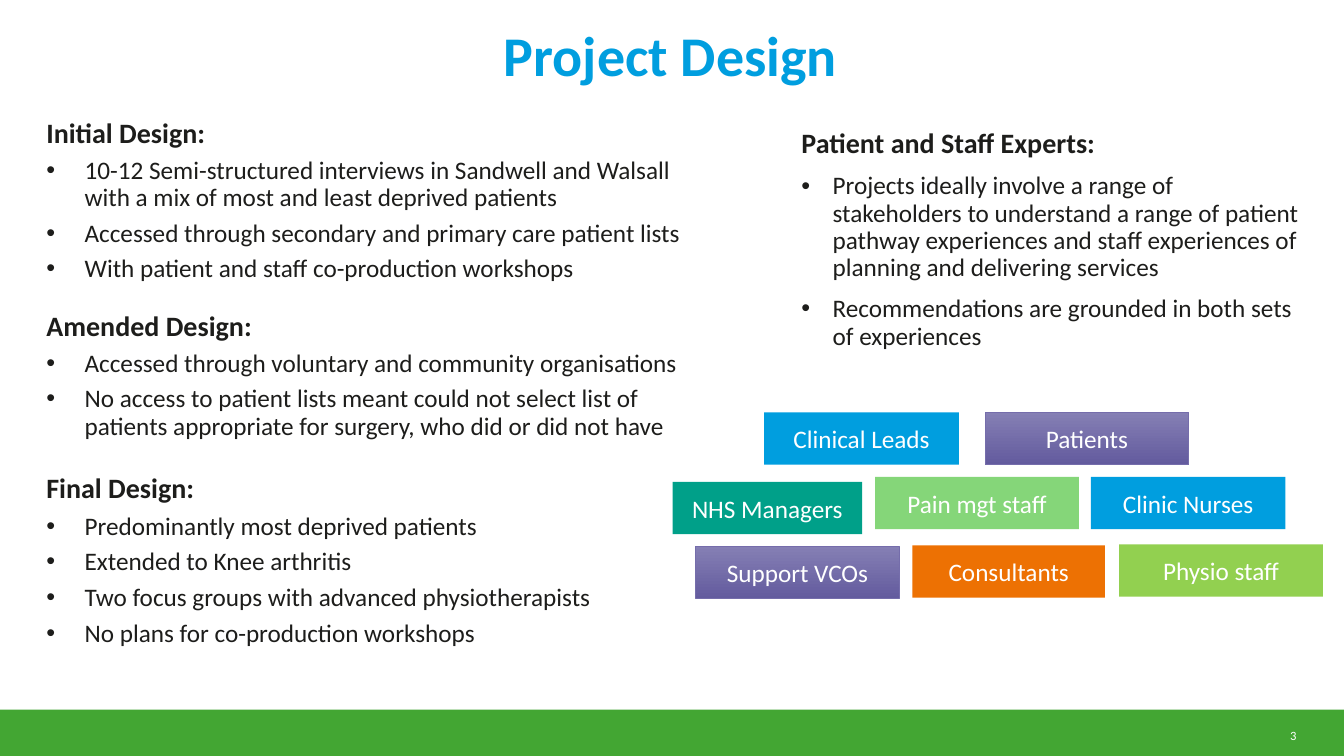
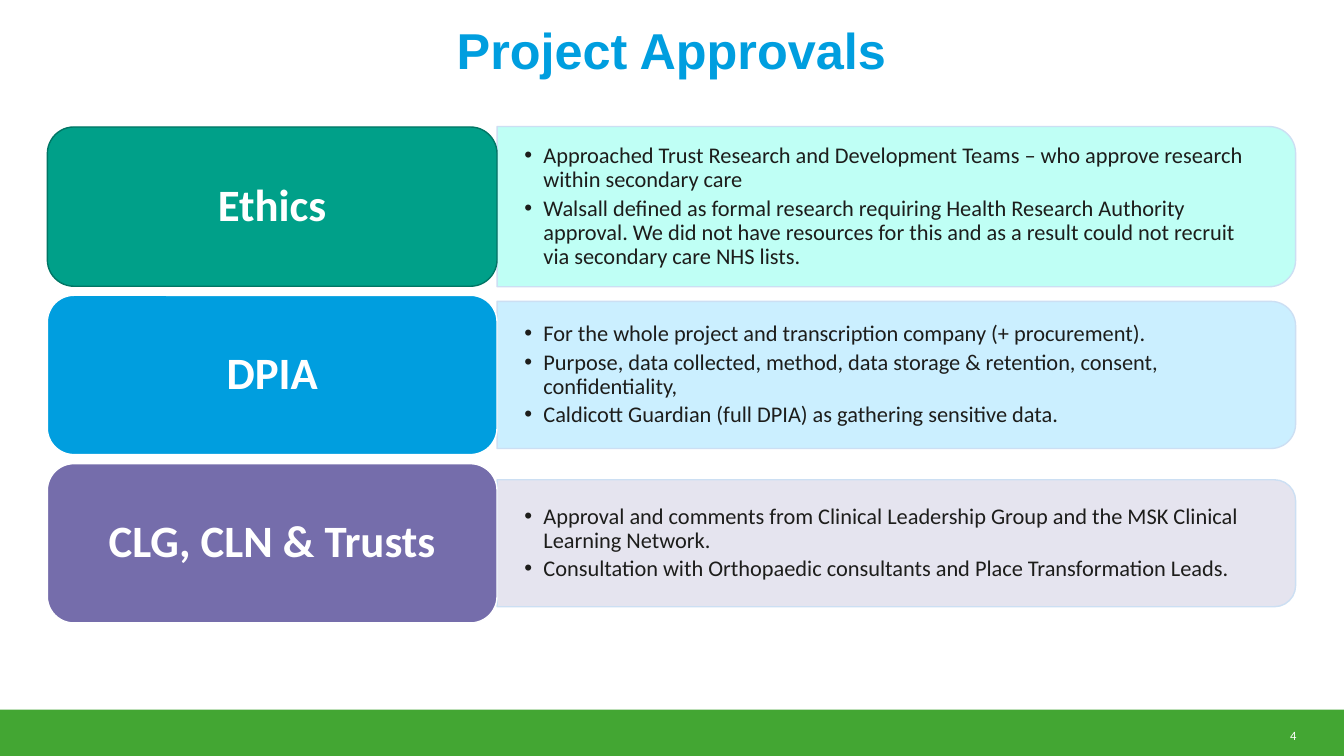
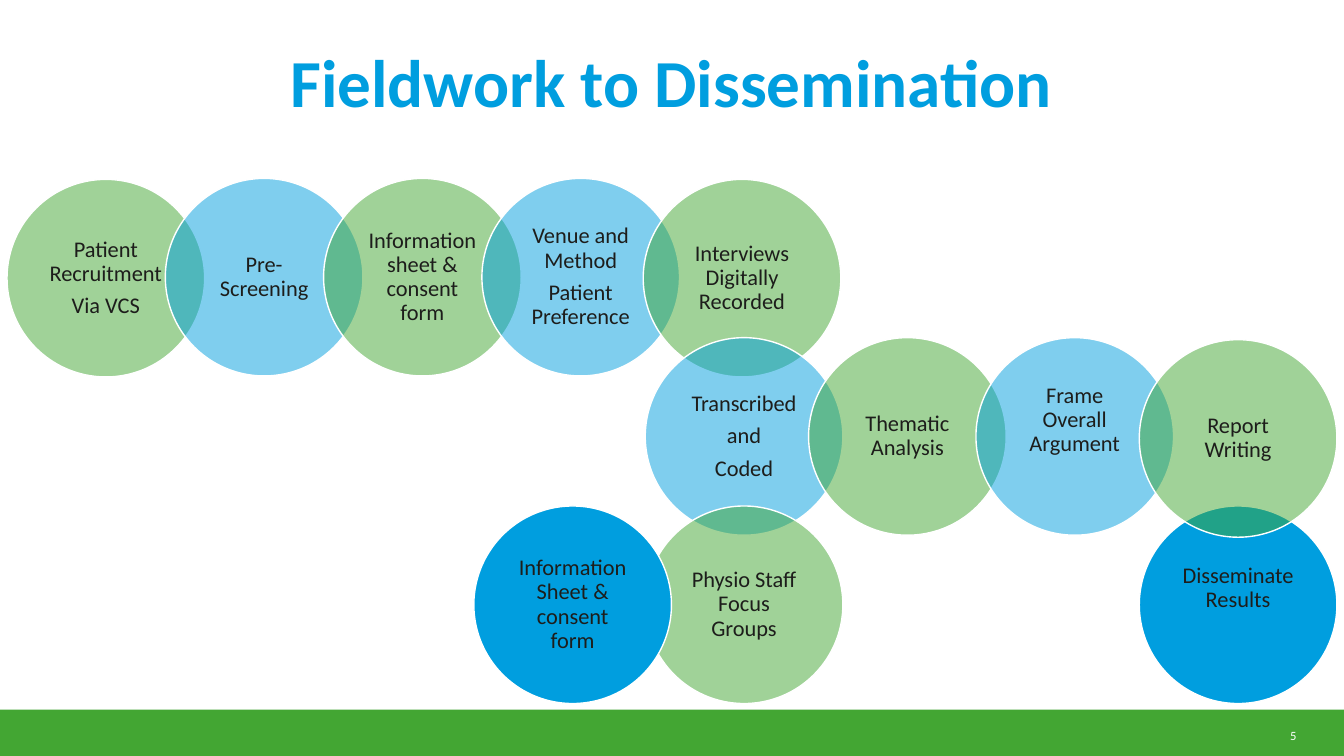
from lxml import etree
from pptx import Presentation
from pptx.dml.color import RGBColor
from pptx.enum.shapes import MSO_SHAPE
from pptx.enum.text import MSO_ANCHOR, MSO_AUTO_SIZE, PP_ALIGN
from pptx.oxml.ns import qn
from pptx.util import Inches, Pt

RECT, OVAL = MSO_SHAPE.RECTANGLE, MSO_SHAPE.OVAL
ROUND, TAB = MSO_SHAPE.ROUNDED_RECTANGLE, MSO_SHAPE.ROUND_2_SAME_RECTANGLE
TOP, MID = MSO_ANCHOR.TOP, MSO_ANCHOR.MIDDLE
LEFT, CENTER, RIGHT = PP_ALIGN.LEFT, PP_ALIGN.CENTER, PP_ALIGN.RIGHT
FIXED = MSO_AUTO_SIZE.NONE

HUES = {
    "ink": "1D1D1B", "white": "FFFFFF", "green": "43A633", "blue": "009EDF",
    "teal": "00A089", "pine": "007665", "purple": "756DAB", "orange": "ED7103",
    "lime": "92D050", "mint": "85D679", "light": "857FB4", "dark": "635B9E",
    "aqua": "B9FFF5", "sky": "C6EEFF", "lilac": "E3E2EE", "edge": "CCDFF3",
}

TITLES = [
    ("Project Design", (0.46, 0.28, 12.38, 0.74), 40, "Calibri"),
    ("Project Approvals", (0.47, 0.26, 12.38, 0.62), 36, "Arial"),
    ("Fieldwork to Dissemination", (0.47, 0.49, 12.38, 1.06), 48, "Calibri"),
]
FIRST = 3

DESIGNS = [
    ("Initial Design:", 0, [
        "10-12 Semi-structured interviews in Sandwell and Walsall with a mix of most and least deprived patients",
        "Accessed through secondary and primary care patient lists",
        "With patient and staff co-production workshops"]),
    ("Amended Design:", 20.4, [
        "Accessed through voluntary and community organisations",
        "No access to patient lists meant could not select list of patients appropriate for surgery, who did or did not have"]),
    ("Final Design:", 24.4, [
        "Predominantly most deprived patients",
        "Extended to Knee arthritis",
        "Two focus groups with advanced physiotherapists",
        "No plans for co-production workshops"]),
]
EXPERTS = [
    ("Patient and Staff Experts:", 0, [
        "Projects ideally involve a range of stakeholders to understand a range of patient pathway experiences and staff experiences of planning and delivering services",
        "Recommendations are grounded in both sets of experiences"]),
]
ROLES = [
    ("Patients", 9.77, 4.09, 2.02, "purple"),
    ("Physio staff", 11.1, 5.4, 2.02, "lime"),
    ("Consultants", 9.05, 5.41, 1.91, "orange"),
    ("NHS Managers", 6.67, 4.78, 1.88, "teal"),
    ("Clinic Nurses", 10.82, 4.73, 1.93, "blue"),
    ("Support VCOs", 6.9, 5.42, 2.02, "purple"),
    ("Pain mgt staff", 8.68, 4.73, 2.02, "mint"),
    ("Clinical Leads", 7.58, 4.09, 1.93, "blue"),
]
CHECKS = [
    ("Ethics", "teal", "pine", "aqua", 1.59, [
        "Approached Trust Research and Development Teams – who approve research within secondary care",
        "Walsall defined as formal research requiring Health Research Authority approval. We did not have resources for this and as a result could not recruit via secondary care NHS lists."]),
    ("DPIA", "blue", "white", "sky", 1.46, [
        "For the whole project and transcription company (+ procurement).",
        "Purpose, data collected, method, data storage & retention, consent, confidentiality,",
        "Caldicott Guardian (full DPIA) as gathering sensitive data."]),
    ("CLG, CLN & Trusts", "purple", "white", "lilac", 1.26, [
        "Approval and comments from Clinical Leadership Group and the MSK Clinical Learning Network.",
        "Consultation with Orthopaedic consultants and Place Transformation Leads."]),
]
STAGES = [
    (["Patient Recruitment", "Via VCS"], 0.07, 1.78, "green", 50, 0),
    (["Pre-Screening"], 1.64, 1.77, "blue", 50, 0),
    (["Information sheet & consent form"], 3.21, 1.77, "green", 50, 0),
    (["Venue and Method", "Patient Preference"], 4.78, 1.77, "blue", 50, 0),
    (["Interviews Digitally Recorded"], 6.38, 1.78, "green", 50, 0),
    (["Transcribed", "and", "Coded"], 6.4, 3.35, "blue", 50, 0),
    (["Thematic Analysis"], 8.02, 3.35, "green", 50, 0),
    (["Frame Overall Argument"], 9.68, 3.35, "blue", 50, 0.32),
    (["Physio Staff Focus Groups"], 6.4, 5.02, "green", 50, 0),
    (["Disseminate Results"], 11.3, 5.02, "blue", 100, 0.32),
    (["Report Writing"], 11.3, 3.37, "green", 50, 0),
    (["Information Sheet & consent form"], 4.7, 5.02, "blue", 100, 0),
]


def tint(name):
    return RGBColor.from_string(HUES[name])


def place(shape, box):
    shape.left, shape.top, shape.width, shape.height = map(Inches, box)


def write(shape, lines, size=18, hue="ink", font="Calibri", bold=False, align=LEFT,
          anchor=TOP, pad=(0, 0, 0, 0), lead=0.9, before=0, after=0, hang=0, more=False):
    frame = shape.text_frame
    frame.word_wrap, frame.auto_size, frame.vertical_anchor = True, FIXED, anchor
    (frame.margin_left, frame.margin_top,
     frame.margin_right, frame.margin_bottom) = map(Inches, pad)
    for rank, line in enumerate(lines):
        fresh = rank == 0 and not more
        para = frame.paragraphs[0] if fresh else frame.add_paragraph()
        if hang:
            props = para._p.get_or_add_pPr()
            props.set("marL", str(Inches(hang)))
            props.set("indent", str(-Inches(hang)))
            etree.SubElement(props, qn("a:buFont")).set("typeface", "Arial")
            etree.SubElement(props, qn("a:buChar")).set("char", "•")
        para.alignment, para.line_spacing = align, lead
        para.space_before = Pt(0 if fresh else before)
        para.space_after = Pt(after)
        run = para.add_run()
        run.text = line
        run.font.size, run.font.name, run.font.bold = Pt(size), font, bold
        run.font.color.rgb = tint(hue)


def draw(slide, kind, box, fill, line=None, width=1, alpha=100):
    shape = slide.shapes.add_shape(kind, *map(Inches, box))
    shape.shadow.inherit = False
    shape.fill.solid()
    shape.fill.fore_color.rgb = tint(fill)
    if alpha < 100:
        color = shape.element.spPr.find(qn("a:solidFill"))[0]
        etree.SubElement(color, qn("a:alpha")).set("val", str(alpha * 1000))
    if line:
        shape.line.color.rgb = tint(line)
        shape.line.width = Pt(width)
    else:
        shape.line.fill.background()
    return shape


def label(slide, box, lines, **fmt):
    write(slide.shapes.add_textbox(*map(Inches, box)), lines, **fmt)


def outline(slide, box, parts, hang, gap, pad):
    shape = slide.shapes.add_textbox(*map(Inches, box))
    for rank, (head, space, points) in enumerate(parts):
        write(shape, [head], size=20, bold=True, before=space, pad=pad, more=rank > 0)
        write(shape, points, before=gap, hang=hang, pad=pad, more=True)


def design(slide):
    outline(slide, (0.46, 1.18, 6.6, 5.13), DESIGNS, 0.38, 6, (0, 0, 0, 0))
    for name, left, top, width, hue in ROLES:
        shape = draw(slide, RECT, (left, top, width, 0.52), hue)
        if hue == "purple":
            shape.fill.gradient()
            shape.fill.gradient_angle = 270
            for stop, shade in zip(shape.fill.gradient_stops, ("light", "dark")):
                stop.color.rgb = tint(shade)
            shape.line.color.rgb = tint(hue)
            shape.line.width = Pt(0.5)
        write(shape, [name], hue="white", align=CENTER, anchor=MID, lead=1,
              pad=(0.1, 0.05, 0.1, 0.05))
    outline(slide, (7.85, 1.23, 5.21, 2.32), EXPERTS, 0.31, 10, (0.1, 0.05, 0.1, 0.05))


def approve(slide):
    left, split, wide, tall = 0.47, 4.93, 7.92, 1.58
    for row, (name, hue, line, pale, high, points) in enumerate(CHECKS):
        mid = 2.05 + 1.67 * row
        box = (split + (wide - high) / 2, mid - wide / 2, high, wide)
        draw(slide, TAB, box, pale, "edge", alpha=90).rotation = 90
        label(slide, (split, mid - high / 2, 7.8, high), points, size=16, anchor=MID,
              after=3, hang=0.19, pad=(0.27, 0.14, 0.27, 0.14))
        shape = draw(slide, ROUND, (left, mid - tall / 2, split - left, tall), hue, line)
        write(shape, [name], size=32, hue="white", bold=True, align=CENTER, anchor=MID,
              pad=(0.13, 0.07, 0.13, 0.07))


def chain(slide):
    for lines, left, top, hue, alpha, lift in STAGES:
        shape = draw(slide, OVAL, (left, top, 1.96, 1.96), hue, "white", alpha=alpha)
        write(shape, lines, size=16, align=CENTER, anchor=MID, after=6,
              pad=(0.11, 0.02, 0.11, 0.02 + lift))


def main():
    deck = Presentation()
    deck.slide_width, deck.slide_height = Inches(13.33), Inches(7.5)
    layout = deck.slide_layouts[5]
    for rank, (build, title) in enumerate(zip((design, approve, chain), TITLES)):
        slide = deck.slides.add_slide(layout)
        if rank == 0:
            band = draw(slide, RECT, (0, 7.04, 13.33, 0.46), "green")
            layout.shapes.element.append(band.element)
        text, box, size, font = title
        place(slide.shapes.title, box)
        write(slide.shapes.title, [text], size=size, hue="blue", font=font, bold=True,
              align=CENTER)
        label(slide, (12.58, 7.22, 0.28, 0.13), [str(FIRST + rank)], size=9, hue="white",
              align=RIGHT, lead=1)
        build(slide)
    deck.save("out.pptx")


if __name__ == "__main__":
    main()
